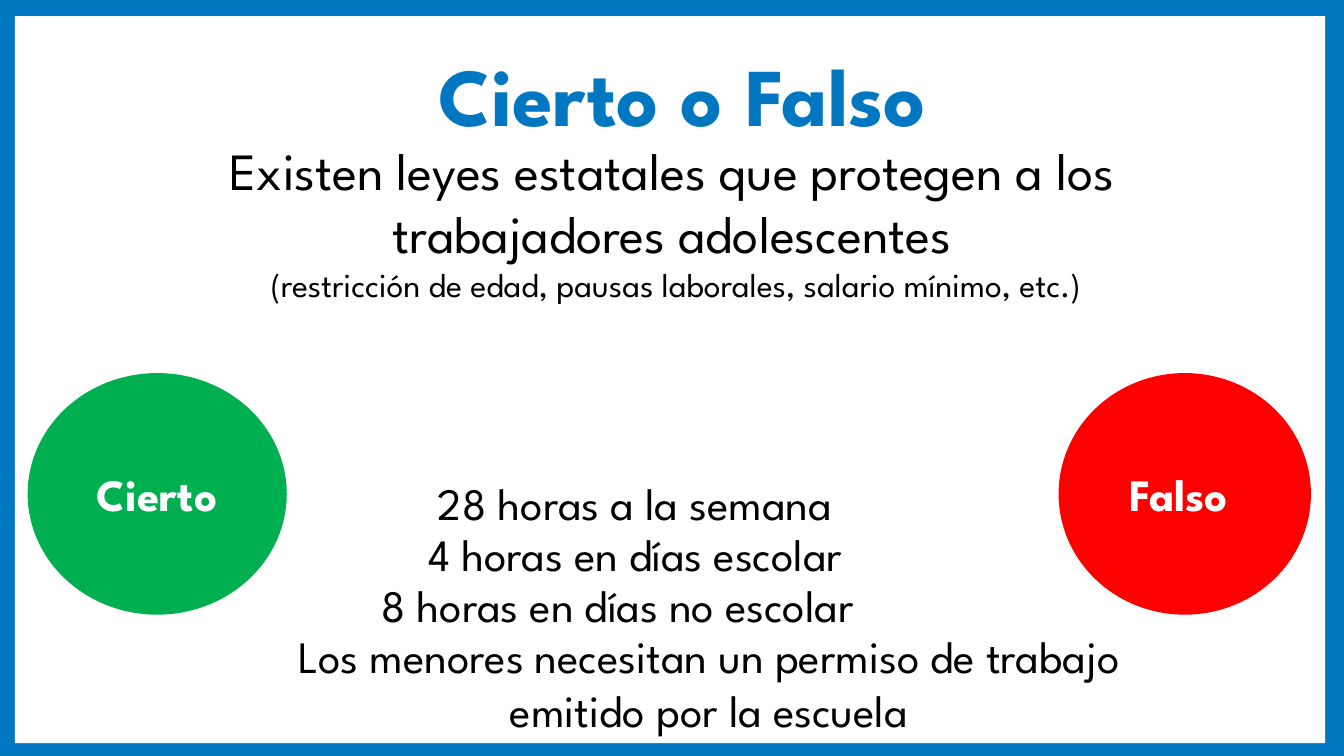
from lxml import etree
from pptx import Presentation
from pptx.dml.color import RGBColor
from pptx.enum.shapes import MSO_SHAPE
from pptx.enum.text import MSO_ANCHOR, MSO_AUTO_SIZE, PP_ALIGN
from pptx.oxml.ns import qn
from pptx.util import Inches, Pt

BLUE = RGBColor(0x00, 0x77, 0xC0)
GREEN = RGBColor(0x00, 0xB0, 0x50)
RED = RGBColor(0xFF, 0x00, 0x00)
WHITE = RGBColor(0xFF, 0xFF, 0xFF)
BLACK = RGBColor(0x00, 0x00, 0x00)
FONT = "League Spartan"


def inches(box):
    return [Inches(length) for length in box]


def write(text_frame, lines, color=BLACK, bold=False, align=PP_ALIGN.CENTER):
    """Write one paragraph for each (text, size) pair."""
    for index, (text, size) in enumerate(lines):
        paragraph = text_frame.paragraphs[0] if index == 0 else text_frame.add_paragraph()
        paragraph.text = text
        paragraph.alignment = align
        paragraph.font.name = FONT
        paragraph.font.size = Pt(size)
        paragraph.font.bold = bold
        paragraph.font.color.rgb = color


def add_frame(slide, box):
    """Blue background with a white panel behind everything else."""
    slide.background.fill.solid()
    slide.background.fill.fore_color.rgb = BLUE
    panel = slide.shapes.add_shape(MSO_SHAPE.RECTANGLE, *inches(box))
    panel.shadow.inherit = False
    panel.fill.solid()
    panel.fill.fore_color.rgb = WHITE
    panel.line.fill.background()
    slide.shapes.title.element.addprevious(panel.element)


def set_title(slide, box, text):
    title = slide.shapes.title
    title.left, title.top, title.width, title.height = inches(box)
    title.fill.solid()
    title.fill.fore_color.rgb = WHITE
    # Half-transparent fill
    color = title.element.spPr.find(qn("a:solidFill"))[0]
    etree.SubElement(color, qn("a:alpha")).set("val", "50000")
    title.text_frame.auto_size = MSO_AUTO_SIZE.NONE
    title.text_frame.vertical_anchor = MSO_ANCHOR.MIDDLE
    write(title.text_frame, [(text, 44)], BLUE, bold=True)


def add_text(slide, box, lines, wrap=True, align=PP_ALIGN.CENTER):
    text_frame = slide.shapes.add_textbox(*inches(box)).text_frame
    text_frame.word_wrap = wrap
    text_frame.auto_size = MSO_AUTO_SIZE.SHAPE_TO_FIT_TEXT
    write(text_frame, lines, align=align)


def add_answer(slide, box, text, color):
    circle = slide.shapes.add_shape(MSO_SHAPE.OVAL, *inches(box))
    circle.shadow.inherit = False
    circle.fill.solid()
    circle.fill.fore_color.rgb = color
    circle.line.color.rgb = color
    circle.line.width = Pt(2)
    circle.text_frame.vertical_anchor = MSO_ANCHOR.MIDDLE
    write(circle.text_frame, [(text, 24)], WHITE, bold=True)


def add_hours(slide, top, rows, step=0.38):
    """Hour limits, one label below the other."""
    for index, (left, width, text) in enumerate(rows):
        add_text(slide, (left, top + index * step, width, 0.5), [(text, 24)],
                 wrap=False, align=PP_ALIGN.LEFT)


def main():
    presentation = Presentation()
    # Widescreen, 16 to 9
    presentation.slide_width = Inches(10)
    presentation.slide_height = presentation.slide_width * 9 // 16
    slide = presentation.slides.add_slide(presentation.slide_layouts[5])

    add_frame(slide, (0.11, 0.12, 9.75, 5.41))
    set_title(slide, (0.58, 0.23, 9, 0.94), "Cierto o Falso")

    # Statement
    add_text(slide, (0.55, 0.98, 8.9, 3.97), [
        ("Existen leyes estatales que protegen a los trabajadores adolescentes", 28),
        (" (restricción de edad, pausas laborales, salario mínimo, etc.)", 18),
    ])

    # Answers
    add_answer(slide, (0.22, 2.79, 1.9, 1.77), "Cierto", GREEN)
    add_answer(slide, (7.89, 2.79, 1.85, 1.77), "Falso ", RED)

    # Details of the law
    add_hours(slide, 3.49, [
        (3.16, 3.69, "28 horas a la semana"),
        (3.09, 3.92, "4 horas en días escolar"),
        (2.74, 4.44, "8 horas en días no escolar"),
    ])
    add_text(slide, (0.74, 4.63, 9.07, 0.91), [
        ("Los menores necesitan un permiso de trabajo", 24),
        ("emitido por la escuela", 24),
    ])

    presentation.save("out.pptx")


if __name__ == "__main__":
    main()
